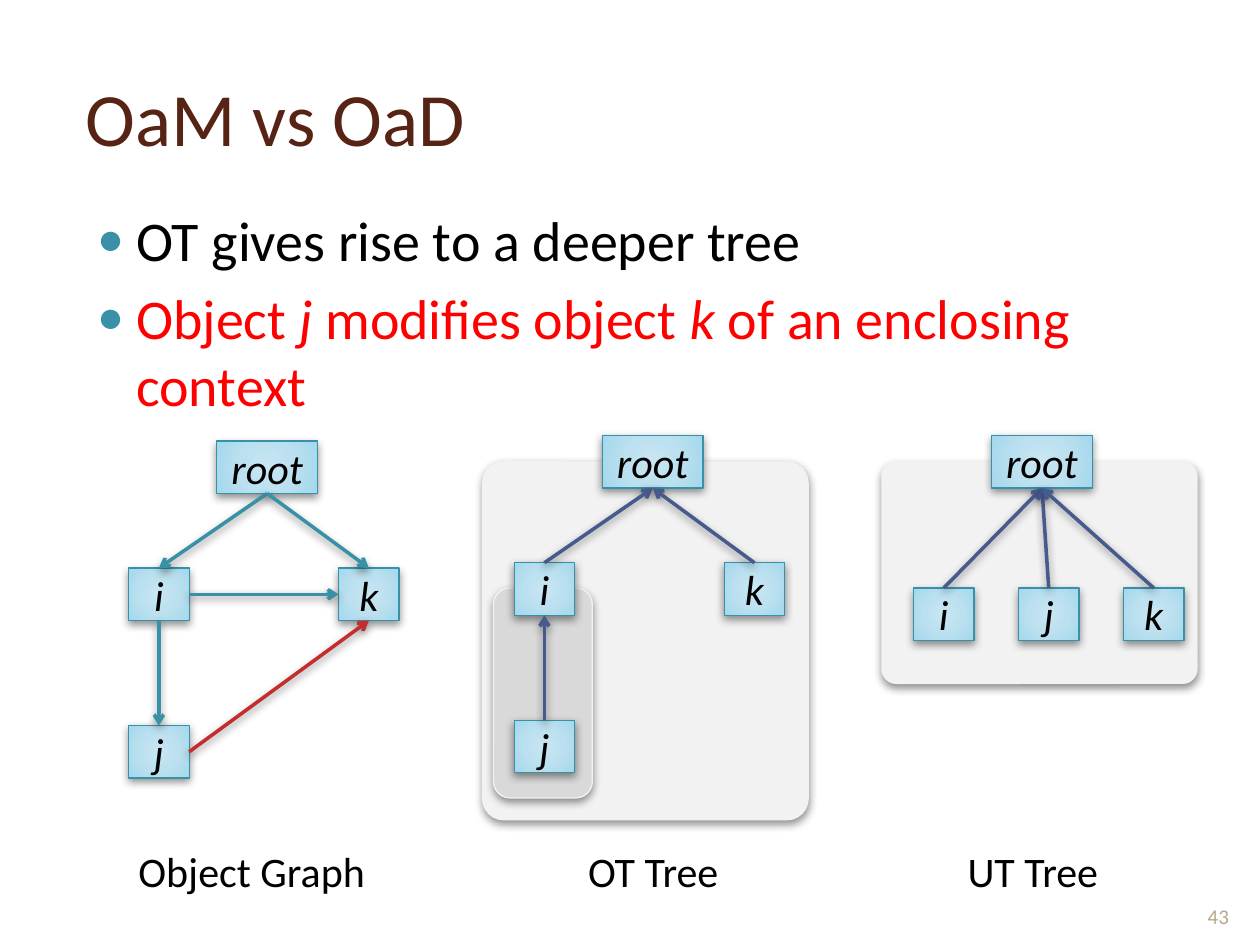
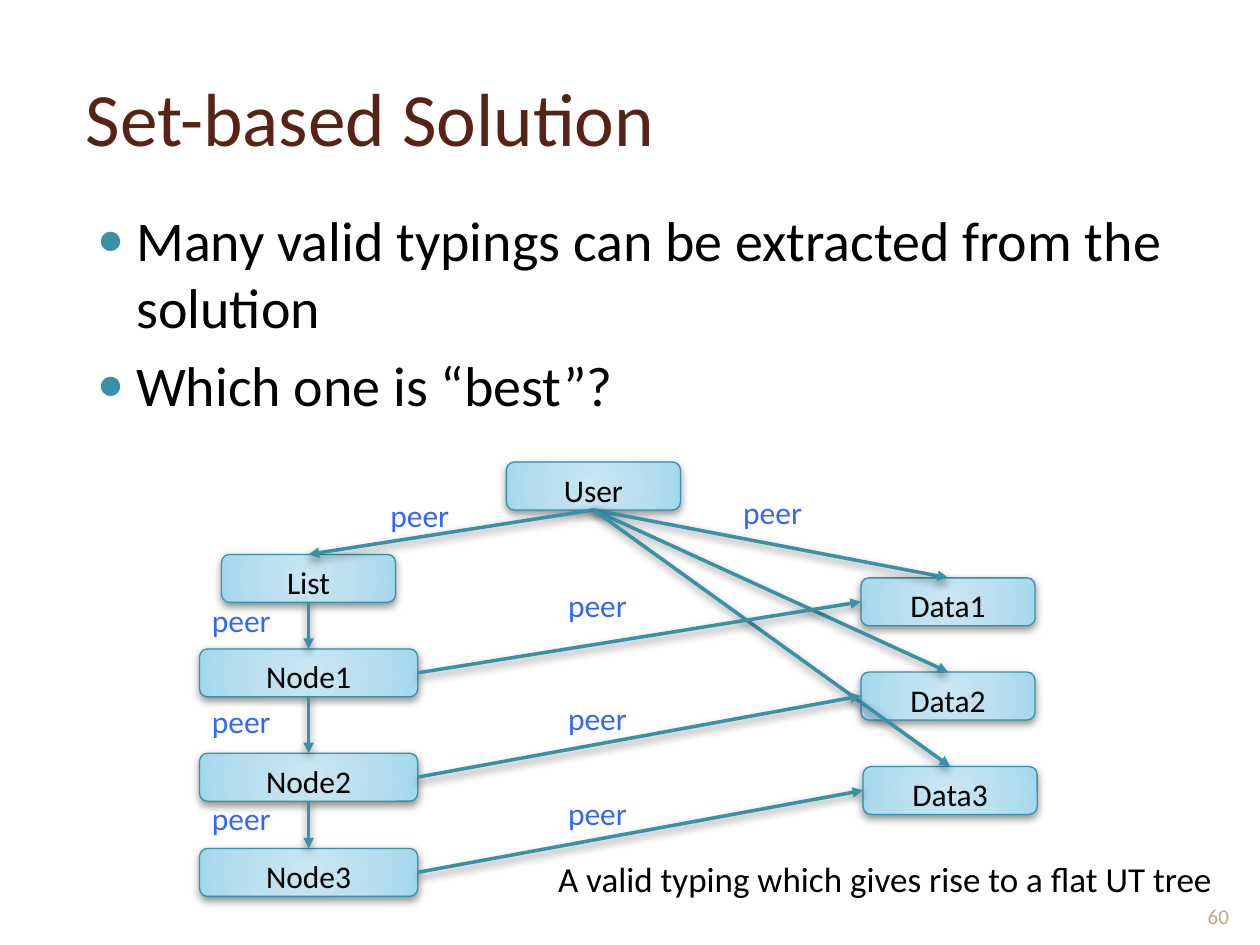
from pptx import Presentation
from pptx.dml.color import RGBColor
from pptx.enum import shapes as kinds, text as t
from pptx.oxml import parse_xml
from pptx.oxml.ns import nsdecls, qn
from pptx.util import Pt

FONT = "Calibri"
BROWN = RGBColor(0x57, 0x23, 0x14)
TEAL = RGBColor(0x38, 0x91, 0xA7)
NAVY = RGBColor(0x47, 0x5A, 0x8D)
CRIMSON = RGBColor(0xC3, 0x2D, 0x2E)
RED = RGBColor(0xFF, 0x00, 0x00)
BLUE = RGBColor(0x33, 0x66, 0xFF)
BLACK = RGBColor(0x00, 0x00, 0x00)
TAN = RGBColor(0xB6, 0xA9, 0x8A)
PALE_GREY = RGBColor(0xF2, 0xF2, 0xF2)
MID_GREY = RGBColor(0xD9, 0xD9, 0xD9)
NODE_STOPS = [(0, RGBColor(0xC9, 0xE6, 0xF2)), (50, RGBColor(0xBB, 0xE0, 0xEF)),
              (97, RGBColor(0xA4, 0xD8, 0xED)), (100, RGBColor(0x9B, 0xD7, 0xEE))]

RECT = kinds.MSO_SHAPE.RECTANGLE
ROUNDED = kinds.MSO_SHAPE.ROUNDED_RECTANGLE
TOP, LEFT, BOTTOM, RIGHT = range(4)  # connection sites of a rectangle


def write(para, text, size=18, color=BLACK, italic=False, align=None):
    """Add a formatted span of text to a paragraph."""
    span = para.add_run()
    span.text = text
    span.font.name, span.font.size = FONT, Pt(size)
    span.font.color.rgb = color
    span.font.italic = italic
    if align is not None:
        para.alignment = align


def place(shape, left, top, width, height):
    shape.left, shape.top = Pt(left), Pt(top)
    shape.width, shape.height = Pt(width), Pt(height)


def add_shadow(shape):
    shape.element.spPr.append(parse_xml(
        f'<a:effectLst {nsdecls("a")}><a:outerShdw blurRad="{Pt(5)}" dist="{Pt(2)}" '
        'dir="5400000" rotWithShape="0"><a:srgbClr val="000000">'
        '<a:alpha val="43000"/></a:srgbClr></a:outerShdw></a:effectLst>'))


def fill_radially(shape, stops):
    shape.fill.background()
    marks = "".join(f'<a:gs pos="{position * 1000}"><a:srgbClr val="{color}"/></a:gs>'
                    for position, color in stops)
    gradient = parse_xml(
        f'<a:gradFill {nsdecls("a")} rotWithShape="1"><a:gsLst>{marks}</a:gsLst>'
        '<a:path path="circle"><a:fillToRect l="50000" t="50000" r="50000" b="50000"/>'
        '</a:path></a:gradFill>')
    properties = shape.element.spPr
    properties.replace(properties.find(qn("a:noFill")), gradient)


def add_box(page, kind, frame, line_color):
    box = page.shapes.add_shape(kind, *map(Pt, frame))
    box.line.color.rgb = line_color
    box.line.width = Pt(0.75)
    return box


def add_panel(page, frame, color, corner):
    panel = add_box(page, ROUNDED, frame, PALE_GREY)
    panel.fill.solid()
    panel.fill.fore_color.rgb = color
    panel.adjustments[0] = corner
    add_shadow(panel)


def add_node(page, kind, text, frame, anchor, **style):
    node = add_box(page, kind, frame, TEAL)
    fill_radially(node, NODE_STOPS)
    add_shadow(node)
    node.text_frame.vertical_anchor = anchor
    write(node.text_frame.paragraphs[0], text, align=t.PP_ALIGN.CENTER, **style)
    return node


def add_arrow(page, source, source_site, target, target_site, color=TEAL, head="arrow"):
    arrow = page.shapes.add_connector(kinds.MSO_CONNECTOR.STRAIGHT, 0, 0, 0, 0)
    arrow.begin_connect(source, source_site)
    arrow.end_connect(target, target_site)
    arrow.line.color.rgb = color
    arrow.line.width = Pt(2)
    arrow.element.spPr.find(qn("a:ln")).append(
        parse_xml(f'<a:tailEnd {nsdecls("a")} type="{head}"/>'))
    add_shadow(arrow)


def add_label(page, text, frame, wrap=True, anchor=t.MSO_ANCHOR.TOP, **style):
    label = page.shapes.add_textbox(*map(Pt, frame))
    label.text_frame.word_wrap = wrap
    label.text_frame.vertical_anchor = anchor
    write(label.text_frame.paragraphs[0], text, **style)


def add_bullet(para):
    para.space_before = Pt(6)
    properties = para._p.get_or_add_pPr()
    properties.set("marL", str(Pt(28.8)))
    properties.set("indent", str(Pt(-22.3)))
    for tag in (f'buClr {nsdecls("a")}><a:srgbClr val="{TEAL}"/></a:buClr',
                f'buSzPct {nsdecls("a")} val="80000"/',
                f'buChar {nsdecls("a")} char="●"/'):
        properties.append(parse_xml(f"<a:{tag}>"))


def add_page(deck, title, bullets, number):
    """Add a slide; each bullet is a colour and its (text, italic) spans."""
    page = deck.slides.add_slide(deck.slide_layouts[1])
    heading, body = page.shapes.title, page.placeholders[1]
    place(heading, 41.8, 21.6, 638.6, 90)
    heading.text_frame.vertical_anchor = t.MSO_ANCHOR.MIDDLE
    write(heading.text_frame.paragraphs[0], title, size=43, color=BROWN,
          align=t.PP_ALIGN.LEFT)
    place(body, 41.8, 113.8, 638.6, 378)
    for frame in (heading.text_frame, body.text_frame):
        frame.auto_size = t.MSO_AUTO_SIZE.NONE
    for index, (color, spans) in enumerate(bullets):
        para = body.text_frame.add_paragraph() if index else body.text_frame.paragraphs[0]
        add_bullet(para)
        for text, italic in spans:
            write(para, text, size=32, color=color, italic=italic)
    add_label(page, number, (678.2, 496.8, 36, 37.4), anchor=t.MSO_ANCHOR.BOTTOM,
              size=12, color=TAN, align=t.PP_ALIGN.CENTER)
    return page


def add_objects(page, left, top, offsets):
    """Draw the object boxes at offsets from a corner; return them by name."""
    return {name: add_node(page, RECT, name,
                           (left + x, top + y, 57.6 if name == "root" else 34.6, 30),
                           t.MSO_ANCHOR.MIDDLE, size=24, italic=True)
            for name, (x, y) in offsets.items()}


def build_comparison(deck):
    page = add_page(deck, "OaM vs OaD", [
        (BLACK, [("OT gives rise to a deeper tree", False)]),
        (RED, [("Object ", False), ("j", True), (" modifies object ", False),
               ("k", True), (" of an enclosing context", False)])], "43")
    deep = {"root": (50.4, 0), "i": (0, 72.6), "k": (120, 72.6), "j": (0, 162.6)}
    flat = {"root": (44.6, 0), "i": (0, 87), "j": (60, 87), "k": (120, 87)}

    add_panel(page, (275.8, 264, 186, 204.5), PALE_GREY, 0.065)
    add_panel(page, (282, 336, 56.5, 120), MID_GREY, 0.167)
    ot = add_objects(page, 293.8, 249, deep)
    add_panel(page, (504, 264, 180, 126.5), PALE_GREY, 0.065)
    ut = add_objects(page, 522, 249, flat)
    for tree, child, owner in ((ot, "i", "root"), (ot, "j", "i"), (ot, "k", "root"),
                               (ut, "i", "root"), (ut, "j", "root"), (ut, "k", "root")):
        add_arrow(page, tree[child], TOP, tree[owner], BOTTOM, color=NAVY)

    graph = add_objects(page, 73.5, 252, deep)
    for source, source_site, target, target_site, color in (
            ("root", BOTTOM, "i", TOP, TEAL), ("i", BOTTOM, "j", TOP, TEAL),
            ("root", BOTTOM, "k", TOP, TEAL), ("j", RIGHT, "k", BOTTOM, CRIMSON),
            ("i", RIGHT, "k", LEFT, TEAL)):
        add_arrow(page, graph[source], source_site, graph[target], target_site, color=color)

    for caption, left, width in (("Object Graph", 72, 151), ("OT Tree", 329, 127),
                                 ("UT Tree", 545.8, 127)):
        add_label(page, caption, (left, 479.5, width, 36), size=24)


def build_solution(deck):
    page = add_page(deck, "Set-based Solution", [
        (BLACK, [("Many valid typings can be extracted from the solution", False)]),
        (BLACK, [("Which one is “best”?", False)])], "60")
    boxes = {name: add_node(page, ROUNDED, name, (left, top, width, 27.4), t.MSO_ANCHOR.TOP)
             for name, left, top, width in (
                 ("User", 289.4, 264, 99.5), ("List", 126.6, 316.8, 99.5),
                 ("Node1", 114, 370.8, 124.7), ("Node2", 114, 430.4, 124.7),
                 ("Node3", 114, 484.8, 124.7), ("Data1", 492, 330.2, 99.5),
                 ("Data2", 492, 384, 99.5), ("Data3", 493.2, 438, 99.5))}
    chain = ["List", "Node1", "Node2", "Node3"]
    downward = [("User", name) for name in ("List", "Data1", "Data2", "Data3")]
    for source, target in downward + list(zip(chain, chain[1:])):
        add_arrow(page, boxes[source], BOTTOM, boxes[target], TOP, head="triangle")
    for index in (1, 2, 3):
        add_arrow(page, boxes[f"Node{index}"], RIGHT, boxes[f"Data{index}"], LEFT,
                  head="triangle")

    for left, top in ((216, 280), (417.6, 278), (114, 340), (114, 397.4), (114, 453),
                      (317.5, 331.2), (317.5, 396), (317.5, 450)):
        add_label(page, "peer", (left, top, 48, 32), wrap=False, color=BLUE)
    add_label(page, "A valid typing which gives rise to a flat UT tree",
              (311.8, 486.7, 396, 31.7), size=20)


def main():
    deck = Presentation()
    deck.slide_width, deck.slide_height = Pt(720), Pt(540)
    build_comparison(deck)
    build_solution(deck)
    deck.save("out.pptx")


if __name__ == "__main__":
    main()
